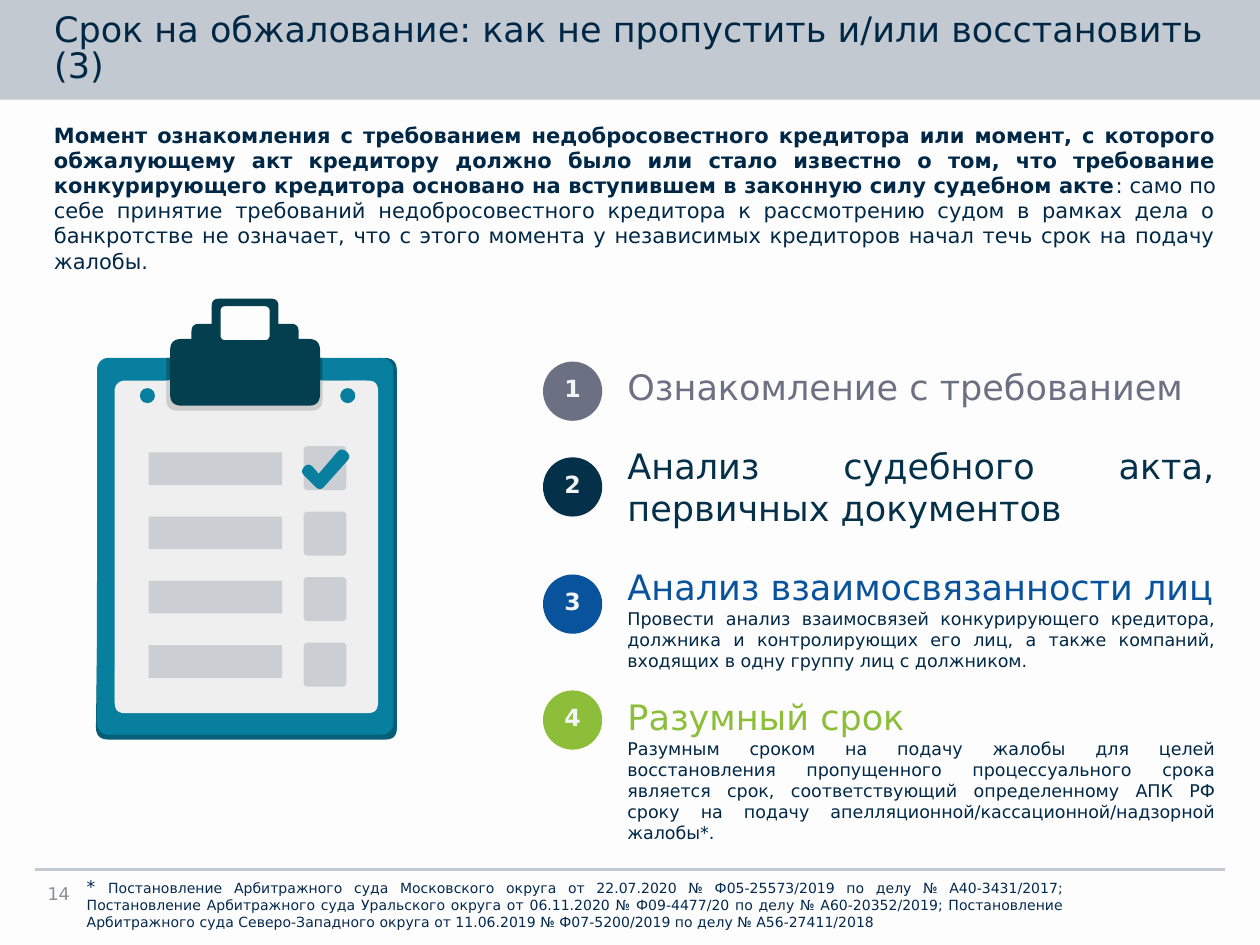
from dataclasses import dataclass

from lxml import etree
from pptx import Presentation
from pptx.dml.color import RGBColor
from pptx.enum.shapes import MSO_CONNECTOR, MSO_SHAPE
from pptx.enum.text import MSO_ANCHOR, MSO_AUTO_SIZE, PP_ALIGN
from pptx.oxml.ns import qn
from pptx.util import Inches, Pt

RECTANGLE = MSO_SHAPE.RECTANGLE
ROUNDED = MSO_SHAPE.ROUNDED_RECTANGLE
OVAL = MSO_SHAPE.OVAL
STRAIGHT = MSO_CONNECTOR.STRAIGHT
TOP, MIDDLE = MSO_ANCHOR.TOP, MSO_ANCHOR.MIDDLE
LEFT, CENTER, JUSTIFY = PP_ALIGN.LEFT, PP_ALIGN.CENTER, PP_ALIGN.JUSTIFY
GROW, FIXED = MSO_AUTO_SIZE.SHAPE_TO_FIT_TEXT, MSO_AUTO_SIZE.NONE


@dataclass(frozen=True)
class Theme:
    """Font, type sizes and colours of the slide."""
    font: str = "DejaVu Sans"
    heading: float = 20
    number: float = 13.5
    body: float = 12
    small: float = 10
    source: float = 8
    background: str = "FDFDFD"
    banner: str = "C2C9D0"
    text: str = "002846"
    footnote: str = "04294E"
    page: str = "8C8E94"
    digit: str = "F3F4F5"
    grey: str = "6C7083"
    navy: str = "043049"
    blue: str = "09529C"
    green: str = "8CBE39"
    teal: str = "087F9F"
    teal_shade: str = "065F77"
    clamp: str = "043F50"
    clamp_shade: str = "CECDCD"
    paper: str = "EFEFEF"
    form: str = "CBCFD4"


THEME = Theme()
STEPS = [
    (2.87, 2.9, 0.34, THEME.grey, "Ознакомление с требованием", None),
    (3.63, 3.53, 0.67, THEME.navy, "Анализ судебного акта, первичных документов", None),
    (4.56, 4.49, 0.84, THEME.blue, "Анализ взаимосвязанности лиц",
     "Провести анализ взаимосвязей конкурирующего кредитора, должника и "
     "контролирующих его лиц, а также компаний, входящих в одну группу лиц с должником."),
    (5.48, 5.52, 1.01, THEME.green, "Разумный срок",
     "Разумным сроком на подачу жалобы для целей восстановления пропущенного "
     "процессуального срока является срок, соответствующий определенному АПК РФ сроку "
     "на подачу апелляционной/кассационной/надзорной жалобы*."),
]


def paint(shape, color):
    """Give a shape a plain fill with no line or shadow."""
    shape.shadow.inherit = False
    shape.fill.solid()
    shape.fill.fore_color.rgb = RGBColor.from_string(color)
    shape.line.fill.background()


def add_block(shapes, kind, box, color, radius=0):
    """Add a filled preset shape, with a corner radius in inches if rounded."""
    shape = shapes.add_shape(kind, *map(Inches, box))
    paint(shape, color)
    if radius:
        shape.adjustments[0] = radius / min(box[2:])


def toward(start, end, distance):
    """Return the point at a distance from start on the way to end."""
    dx, dy = end[0] - start[0], end[1] - start[1]
    share = distance / (dx * dx + dy * dy) ** 0.5
    return start[0] + dx * share, start[1] + dy * share


def round_corners(corners, steps=6):
    """Turn (x, y, radius) corners into the points of a rounded outline."""
    points = []
    for index, (x, y, radius) in enumerate(corners):
        if not radius:
            points.append((Inches(x), Inches(y)))
            continue
        begin = toward((x, y), corners[index - 1], radius)
        end = toward((x, y), corners[(index + 1) % len(corners)], radius)
        for step in range(steps + 1):
            t = step / steps
            a, b, c = (1 - t) ** 2, 2 * t * (1 - t), t * t
            points.append((Inches(a * begin[0] + b * x + c * end[0]),
                           Inches(a * begin[1] + b * y + c * end[1])))
    return points


def add_outline(shapes, color, *contours):
    """Add one freeform made of rounded contours."""
    first, *others = map(round_corners, contours)
    builder = shapes.build_freeform(*first[0], scale=1.0)
    builder.add_line_segments(first[1:], close=True)
    for points in others:
        builder.move_to(*points[0])
        builder.add_line_segments(points[1:], close=True)
    paint(builder.convert_to_shape(), color)


def add_text(slide, box, paragraphs, align=JUSTIFY, anchor=TOP, insets=(0, 0, 0, 0),
             autosize=FIXED, spacing=None):
    """Add a text box from paragraphs of (text, size, color, bold) runs."""
    frame = slide.shapes.add_textbox(*map(Inches, box)).text_frame
    frame.word_wrap = True
    frame.auto_size = autosize
    frame.vertical_anchor = anchor
    (frame.margin_left, frame.margin_top,
     frame.margin_right, frame.margin_bottom) = map(Inches, insets)
    for index, runs in enumerate(paragraphs):
        paragraph = frame.add_paragraph() if index else frame.paragraphs[0]
        paragraph.alignment = align
        paragraph.line_spacing = spacing
        for text, size, color, bold in runs:
            run = paragraph.add_run()
            run.text = text
            run.font.name = THEME.font
            run.font.size = Pt(size)
            run.font.bold = bold
            run.font.color.rgb = RGBColor.from_string(color)


def add_footer_line(slide):
    """Draw the rule above the footer."""
    line = slide.shapes.add_connector(
        STRAIGHT, Inches(0.28), Inches(6.9), Inches(9.72), Inches(6.9))
    line.line.color.rgb = RGBColor.from_string(THEME.banner)
    line.line.width = Pt(1.5)
    etree.SubElement(line._element.spPr, qn("a:effectLst"))


def add_step(slide, number, step):
    """Add a numbered circle with its heading and explanation."""
    circle_top, text_top, height, color, heading, detail = step
    add_block(slide.shapes, OVAL, (4.31, circle_top, 0.47, 0.47), color)
    paragraphs = [[(heading, THEME.heading, color, False)]]
    if detail:
        paragraphs.append([(detail, THEME.small, THEME.text, False)])
    add_text(slide, (4.98, text_top, 4.66, height), paragraphs, autosize=GROW)
    add_text(slide, (4.36, circle_top + 0.1, 0.37, 0.28),
             [[(str(number), THEME.number, THEME.digit, True)]], CENTER)


def add_clipboard(slide):
    """Draw the clipboard with its clamp, form rows and check mark."""
    shapes = slide.shapes.add_group_shape().shapes
    add_outline(shapes, THEME.teal_shade, [
        (0.76, 5.87, 0.1), (0.8, 2.88, 0.09), (3.15, 2.84, 0.1), (3.15, 5.87, 0.09)])
    add_block(shapes, ROUNDED, (0.77, 2.84, 2.35, 2.99), THEME.teal, 0.09)
    add_outline(shapes, THEME.paper, [
        (0.91, 5.66, 0.08), (0.93, 3.04, 0.08), (3, 3.02, 0.08), (3, 5.66, 0.08)])
    add_block(shapes, ROUNDED, (0.91, 3.02, 2.06, 2.62), THEME.paper, 0.08)
    add_block(shapes, RECTANGLE, (1.32, 2.84, 1.24, 0.18), THEME.teal_shade)
    add_outline(shapes, THEME.clamp_shade, [
        (1.32, 3.02, 0), (2.56, 3.02, 0), (2.56, 3.26, 0.09), (1.32, 3.26, 0.09)])
    add_outline(shapes, THEME.clamp, [
        (1.35, 2.69, 0.09), (1.52, 2.69, 0), (1.52, 2.57, 0.06), (1.68, 2.57, 0),
        (1.68, 2.37, 0.06), (2.21, 2.37, 0.06), (2.21, 2.57, 0), (2.37, 2.57, 0.06),
        (2.37, 2.69, 0), (2.54, 2.69, 0.09), (2.54, 3.22, 0.09), (1.35, 3.22, 0.09)], [
        (1.75, 2.43, 0.04), (1.75, 2.7, 0.04), (2.14, 2.7, 0.04), (2.14, 2.43, 0.04)])
    for left in (1.11, 2.7):
        add_block(shapes, OVAL, (left, 3.08, 0.12, 0.12), THEME.teal)
    for row in range(4):
        add_block(shapes, ROUNDED, (2.41, 3.54 + 0.52 * row, 0.34, 0.35), THEME.form, 0.03)
        add_block(shapes, RECTANGLE, (1.18, 3.59 + 0.51 * row, 1.06, 0.26), THEME.form)
    add_outline(shapes, THEME.teal, [
        (2.38, 3.74, 0.05), (2.45, 3.67, 0.05), (2.53, 3.76, 0),
        (2.71, 3.55, 0.05), (2.79, 3.62, 0.05), (2.54, 3.9, 0.05)])


def main():
    """Build the slide and save it."""
    presentation = Presentation()
    presentation.slide_width, presentation.slide_height = Inches(10), Inches(7.5)
    slide = presentation.slides.add_slide(presentation.slide_layouts[6])
    slide.background.fill.solid()
    slide.background.fill.fore_color.rgb = RGBColor.from_string(THEME.background)
    standard = (0.1, 0.05, 0.1, 0.05)

    add_block(slide.shapes, RECTANGLE, (0, 0, 10, 0.79), THEME.banner)
    add_footer_line(slide)
    for number, step in enumerate(STEPS, 1):
        add_step(slide, number, step)
    add_text(slide, (0, 0, 10, 0.79), [[
        ("Срок на обжалование: как не пропустить и/или восстановить (3)",
         THEME.heading, THEME.text, False)]],
        LEFT, MIDDLE, (0.43, 0.04, 0.04, 0.04), spacing=0.85)
    add_text(slide, (0.33, 0.92, 9.42, 5.91), [[
        ("Момент ознакомления с требованием недобросовестного кредитора или момент, "
         "с которого обжалующему акт кредитору должно было или стало известно о том, "
         "что требование конкурирующего кредитора основано на вступившем в законную "
         "силу судебном акте", THEME.body, THEME.text, True),
        (": само по себе принятие требований недобросовестного кредитора к рассмотрению "
         "судом в рамках дела о банкротстве не означает, что с этого момента у "
         "независимых кредиторов начал течь срок на подачу жалобы.",
         THEME.body, THEME.text, False)]], insets=standard)
    add_text(slide, (0.28, 6.96, 1.26, 0.26),
             [[("14", THEME.small, THEME.page, False)]], LEFT, MIDDLE, standard)
    add_clipboard(slide)
    add_text(slide, (0.59, 6.9, 7.96, 0.54), [[
        ("* ", THEME.small, THEME.footnote, False),
        ("Постановление Арбитражного суда Московского округа от 22.07.2020 "
         "№ Ф05-25573/2019 по делу № А40-3431/2017; Постановление Арбитражного суда "
         "Уральского округа от 06.11.2020 № Ф09-4477/20 по делу № А60-20352/2019; "
         "Постановление Арбитражного суда Северо-Западного округа от 11.06.2019 "
         "№ Ф07-5200/2019 по делу № А56-27411/2018",
         THEME.source, THEME.footnote, False)]], insets=standard, autosize=GROW)
    presentation.save("out.pptx")


if __name__ == "__main__":
    main()
